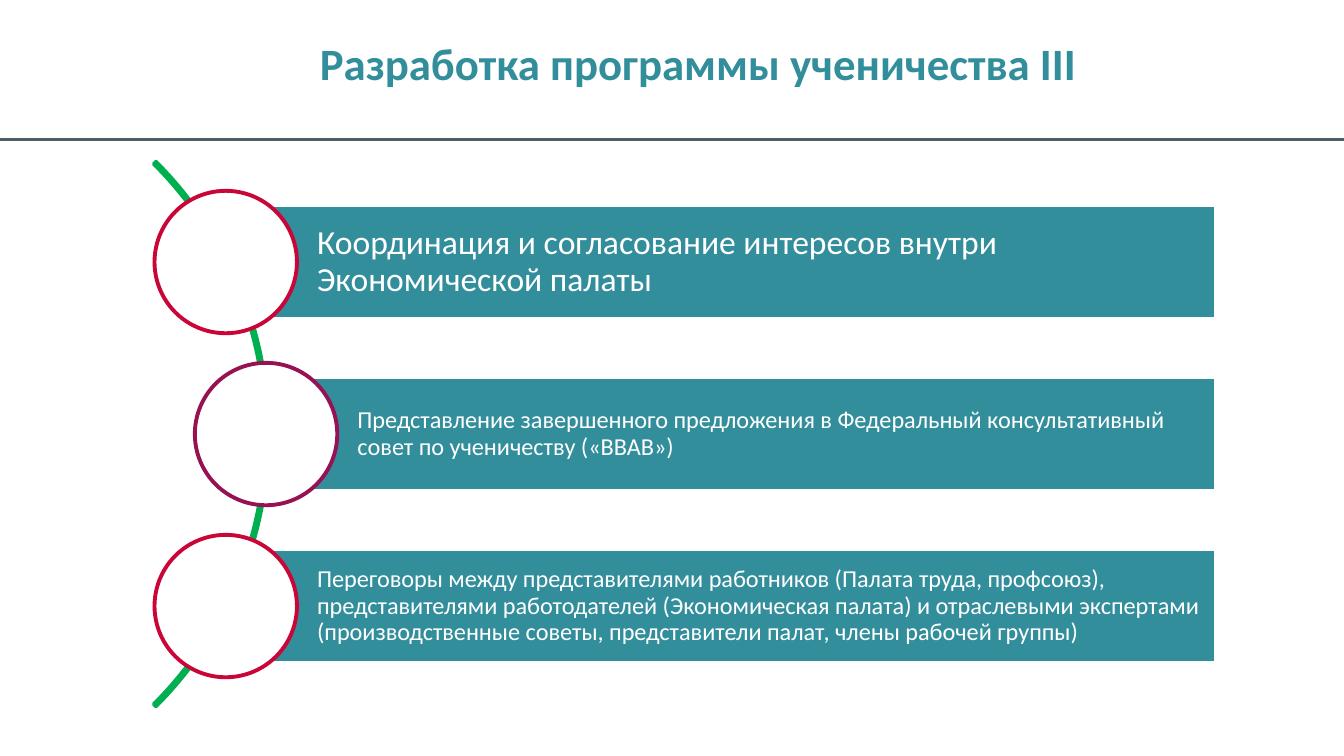
"""Build the slide on developing an apprenticeship programme, part III."""
from lxml import etree
from pptx import Presentation
from pptx.dml.color import RGBColor
from pptx.enum import shapes, text
from pptx.oxml import ns
from pptx.util import Inches, Pt

TEAL = RGBColor(0x33, 0x8E, 0x9C)
GREEN = RGBColor(0x00, 0xB0, 0x50)
RED = RGBColor(0xCA, 0x05, 0x38)
PURPLE = RGBColor(0x96, 0x12, 0x53)
SLATE = RGBColor(0x4C, 0x5D, 0x68)
WHITE = RGBColor(0xFF, 0xFF, 0xFF)

TITLE = "Разработка программы ученичества III"
STEPS = [
    ("Координация и согласование интересов внутри Экономической палаты", 18, 1.68, RED),
    ("Представление завершенного предложения в Федеральный консультативный "
     "совет по ученичеству («BBAB»)", 13, 1.98, PURPLE),
    ("Переговоры между представителями работников (Палата труда, профсоюз), "
     "представителями работодателей (Экономическая палата) и отраслевыми экспертами "
     "(производственные советы, представители палат, члены рабочей группы)", 13, 1.68, RED),
]
WIDTH = 10
HEIGHT = WIDTH * 9 / 16
RULE_Y = 1.04
FIRST_Y, PITCH = 1.95, 1.28
BAR_RIGHT, BAR_H = 9.05, 0.85
CIRCLE = 1.06
ARC = 5.73
STROKE = 2.08


def add_shape(slide, kind, box, fill, line):
    sp = slide.shapes.add_shape(kind, *map(Inches, box))
    sp.shadow.inherit = False
    if fill is None:
        sp.fill.background()
    else:
        sp.fill.solid()
        sp.fill.fore_color.rgb = fill
    sp.line.color.rgb = line
    sp.line.width = Pt(STROKE)
    return sp


def write(sp, words, size, color, bold=False, spacing=0.9,
          anchor=text.MSO_ANCHOR.MIDDLE, insets=(0, 0, 0, 0)):
    tf = sp.text_frame
    tf.auto_size = text.MSO_AUTO_SIZE.NONE
    tf.word_wrap = True
    tf.vertical_anchor = anchor
    tf.margin_left, tf.margin_top, tf.margin_right, tf.margin_bottom = map(Inches, insets)
    p = tf.paragraphs[0]
    p.alignment = text.PP_ALIGN.LEFT
    p.line_spacing = spacing
    r = p.add_run()
    r.text = words
    r.font.name = "Calibri"
    r.font.size = Pt(size)
    r.font.bold = bold
    r.font.color.rgb = color


def add_rule(slide):
    line = slide.shapes.add_connector(
        shapes.MSO_CONNECTOR.STRAIGHT, Inches(WIDTH), Inches(RULE_Y), 0, Inches(RULE_Y))
    line.line.color.rgb = SLATE
    line.line.width = Pt(1.5)
    etree.SubElement(line._element.spPr, ns.qn("a:effectLst"))


def add_arc(slide):
    middle = FIRST_Y + PITCH * (len(STEPS) - 1) / 2
    arc = add_shape(slide, shapes.MSO_SHAPE.BLOCK_ARC,
                    (2 - ARC, middle - ARC / 2, ARC, ARC), None, GREEN)
    for i, value in enumerate((189, 27, 0.004)):
        arc.adjustments[i] = value


def add_step(slide, row, words, size, x, ring):
    y = FIRST_Y + row * PITCH
    bar = add_shape(slide, shapes.MSO_SHAPE.RECTANGLE,
                    (x, y - BAR_H / 2, BAR_RIGHT - x, BAR_H), TEAL, WHITE)
    write(bar, words, size, WHITE, insets=(0.68, 0.04, 0.04, 0.04))
    add_shape(slide, shapes.MSO_SHAPE.OVAL,
              (x - CIRCLE / 2, y - CIRCLE / 2, CIRCLE, CIRCLE), WHITE, ring)


def main():
    prs = Presentation()
    prs.slide_width, prs.slide_height = Inches(WIDTH), Inches(HEIGHT)
    slide = prs.slides.add_slide(prs.slide_layouts.get_by_name("Title Only"))
    title = slide.shapes.title
    title.left, title.top, title.width, title.height = map(Inches, (2.38, 0.25, 5.75, 0.68))
    write(title, TITLE, 24, TEAL, bold=True, spacing=Pt(30), anchor=text.MSO_ANCHOR.TOP)
    add_rule(slide)
    add_arc(slide)
    for row, step in enumerate(STEPS):
        add_step(slide, row, *step)
    prs.save("out.pptx")


if __name__ == "__main__":
    main()
